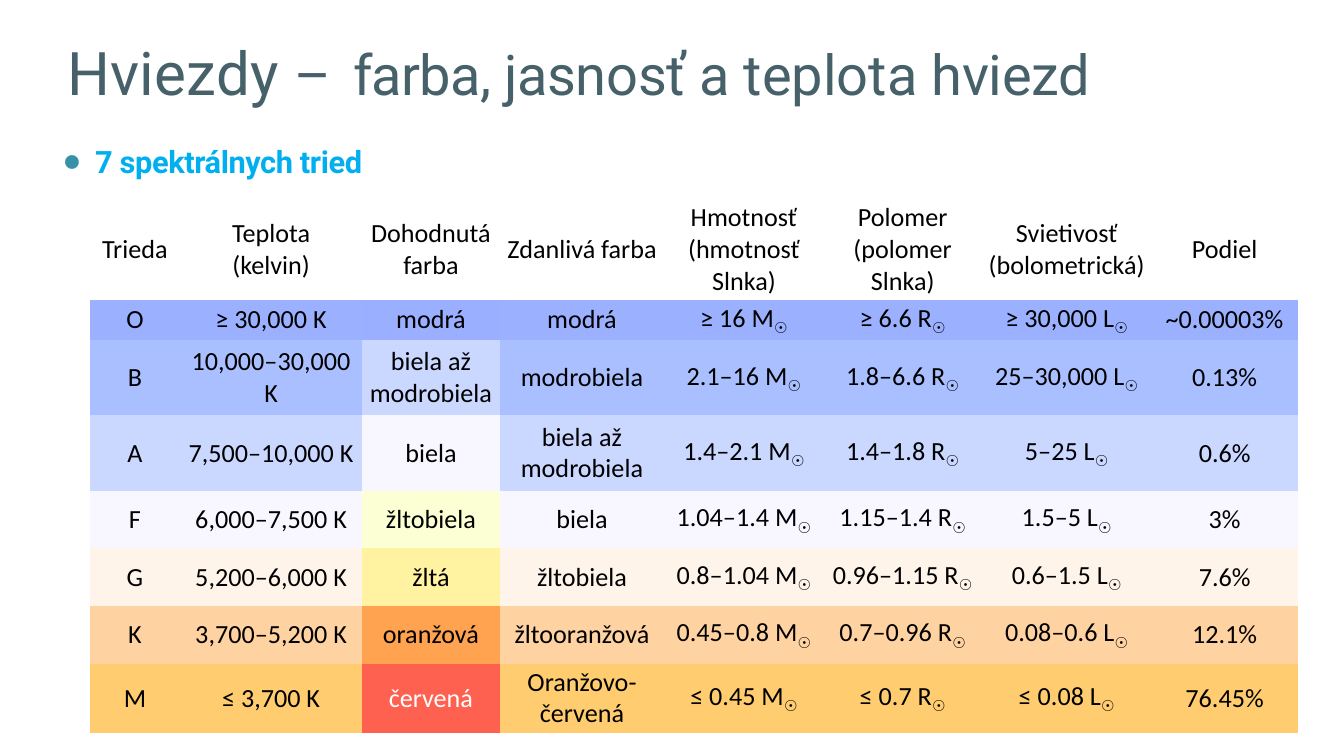
from dataclasses import dataclass

from lxml.etree import SubElement
from pptx import Presentation
from pptx.dml.color import RGBColor
from pptx.enum.text import MSO_ANCHOR as Anchor, MSO_AUTO_SIZE as AutoSize, PP_ALIGN as Align
from pptx.oxml.ns import qn
from pptx.util import Cm, Pt


@dataclass(frozen=True)
class Theme:
    heading_font: str = "Roboto"
    table_font: str = "Calibri"
    title_color: str = "466169"
    accent: str = "00AFEF"
    bullet: str = "3891A7"
    dark: str = "000000"
    light: str = "FFFFFF"
    title_size: float = 32.2
    subtitle_size: float = 30
    body_size: float = 16.5
    table_size: float = 14


NO_TABLE_STYLE = "{2D5ABB26-0587-4C30-8999-92F81FD0307C}"
SUN = "☉"
AGREED_COLOR_COLUMN = 2

COLUMN_WIDTHS = [1.7, 3.45, 2.59, 3.12, 3, 3, 3.2, 2.77]
ROW_HEIGHTS = [1.8, 0.76, 1.42, 1.42, 1.09, 1.09, 1.09, 1.24]

HEADER = ["Trieda", "Teplota\v(kelvin)", "Dohodnutá farba", "Zdanlivá farba",
          "Hmotnosť\v(hmotnosť Slnka)", "Polomer\v(polomer Slnka)",
          "Svietivosť\v(bolometrická)", "Podiel"]

STAR_CLASSES = [
    ["O", "≥ 30,000 K", "modrá", "modrá", "≥ 16 M☉", "≥ 6.6 R☉", "≥ 30,000 L☉", "~0.00003%"],
    ["B", "10,000–30,000 K", "biela až modrobiela", "modrobiela",
     "2.1–16 M☉", "1.8–6.6 R☉", "25–30,000 L☉", "0.13%"],
    ["A", "7,500–10,000 K", "biela", "biela až modrobiela",
     "1.4–2.1 M☉", "1.4–1.8 R☉", "5–25 L☉", "0.6%"],
    ["F", "6,000–7,500 K", "žltobiela", "biela", "1.04–1.4 M☉", "1.15–1.4 R☉", "1.5–5 L☉", "3%"],
    ["G", "5,200–6,000 K", "žltá", "žltobiela", "0.8–1.04 M☉", "0.96–1.15 R☉", "0.6–1.5 L☉", "7.6%"],
    ["K", "3,700–5,200 K", "oranžová", "žltooranžová",
     "0.45–0.8 M☉", "0.7–0.96 R☉", "0.08–0.6 L☉", "12.1%"],
    ["M", "≤ 3,700 K", "červená", "Oranžovo-červená",
     "≤ 0.45 M☉", "≤ 0.7 R☉", "≤ 0.08 L☉", "76.45%"],
]

ROW_FILLS = ["9BB0FF", "AABFFF", "CAD7FF", "F8F7FF", "FFF4EA", "FFD2A1", "FFCC6F"]
AGREED_FILLS = ["9AAFFF", "CAD7FF", "F8F7FF", "FCFFD3", "FFF2A1", "FFA351", "FF6151"]


class SlideBuilder:
    def __init__(self, presentation, theme):
        self.theme = theme
        self.slide = presentation.slides.add_slide(presentation.slide_layouts[1])

    def style(self, run, font, size, color, bold=False, spacing=0):
        run.font.name = font
        run.font.size = Pt(size)
        run.font.bold = bold
        run.font.color.rgb = RGBColor.from_string(color)
        if spacing:
            run.font._element.set("spc", str(round(spacing * 100)))

    def place(self, shape, left, top, width, height):
        shape.left, shape.top = Cm(left), Cm(top)
        shape.width, shape.height = Cm(width), Cm(height)
        frame = shape.text_frame
        frame.margin_left = frame.margin_right = frame.margin_bottom = 0
        frame.margin_top = Cm(0.03)
        frame.vertical_anchor = Anchor.TOP
        frame.auto_size = AutoSize.NONE
        frame.word_wrap = True
        return frame

    def title(self, parts, *box):
        paragraph = self.place(self.slide.shapes.title, *box).paragraphs[0]
        paragraph.alignment = Align.LEFT
        for text, size, spacing in parts:
            run = paragraph.add_run()
            run.text = text
            self.style(run, self.theme.heading_font, size, self.theme.title_color, spacing=spacing)

    def bullet_line(self, text, *box):
        frame = self.place(self.slide.placeholders[1], *box)
        frame.text = text
        paragraph = frame.paragraphs[0]
        paragraph.space_before = Pt(0)
        properties = paragraph._p.get_or_add_pPr()
        properties.set("marL", str(Cm(0.61)))
        properties.set("indent", str(Cm(-0.58)))
        color = SubElement(properties, qn("a:buClr"))
        SubElement(color, qn("a:srgbClr"), val=self.theme.bullet)
        SubElement(properties, qn("a:buSzPct"), val="80000")
        SubElement(properties, qn("a:buChar"), char="⚫")
        self.style(paragraph.runs[0], self.theme.heading_font, self.theme.body_size,
                   self.theme.accent, bold=True, spacing=-0.2)

    def cell(self, cell, text, fill, color):
        cell.margin_left = cell.margin_right = Cm(0.1)
        cell.margin_top = cell.margin_bottom = Cm(0.05)
        cell.vertical_anchor = Anchor.MIDDLE
        if fill:
            cell.fill.solid()
            cell.fill.fore_color.rgb = RGBColor.from_string(fill)
        else:
            cell.fill.background()
        paragraph = cell.text_frame.paragraphs[0]
        paragraph.text = text.removesuffix(SUN)
        paragraph.alignment = Align.CENTER
        if text.endswith(SUN):
            sun = paragraph.add_run()
            sun.text = SUN
            sun.font._element.set("baseline", "-25000")
        for run in paragraph.runs:
            self.style(run, self.theme.table_font, self.theme.table_size, color)
        for line_break in paragraph._p.findall(qn("a:br")):
            SubElement(line_break, qn("a:rPr"), sz=str(self.theme.table_size * 100))

    def table(self, rows, left, top):
        frame = self.slide.shapes.add_table(
            len(rows), len(COLUMN_WIDTHS), Cm(left), Cm(top),
            Cm(sum(COLUMN_WIDTHS)), Cm(sum(ROW_HEIGHTS)))
        table = frame.table
        table.first_row = table.horz_banding = False
        table._tbl.tblPr.find(qn("a:tableStyleId")).text = NO_TABLE_STYLE
        for column, width in zip(table.columns, COLUMN_WIDTHS):
            column.width = Cm(width)
        for row, height in zip(table.rows, ROW_HEIGHTS):
            row.height = Cm(height)
        for row_index, row in enumerate(rows):
            for column_index, text in enumerate(row):
                fills = AGREED_FILLS if column_index == AGREED_COLOR_COLUMN else ROW_FILLS
                fill = fills[row_index - 1] if row_index else None
                color = self.theme.light if text == "červená" else self.theme.dark
                self.cell(table.cell(row_index, column_index), text, fill, color)


def main():
    presentation = Presentation()
    presentation.slide_width, presentation.slide_height = Cm(25.4), Cm(14.29)
    theme = Theme()
    builder = SlideBuilder(presentation, theme)
    builder.title([("Hviezdy ", theme.title_size, 0.2),
                   ("– ", theme.subtitle_size, 2),
                   ("farba, ", theme.subtitle_size, -0.4),
                   ("jasnosť ", theme.subtitle_size, -0.2),
                   ("a teplota ", theme.subtitle_size, 0),
                   ("hviezd", theme.subtitle_size, -0.2)], 1.27, 0.64, 21.79, 1.4)
    builder.bullet_line("7 spektrálnych tried", 1.19, 2.67, 6.05, 0.74)
    builder.table([HEADER, *STAR_CLASSES], 1.7, 3.76)
    presentation.save("out.pptx")


if __name__ == "__main__":
    main()
